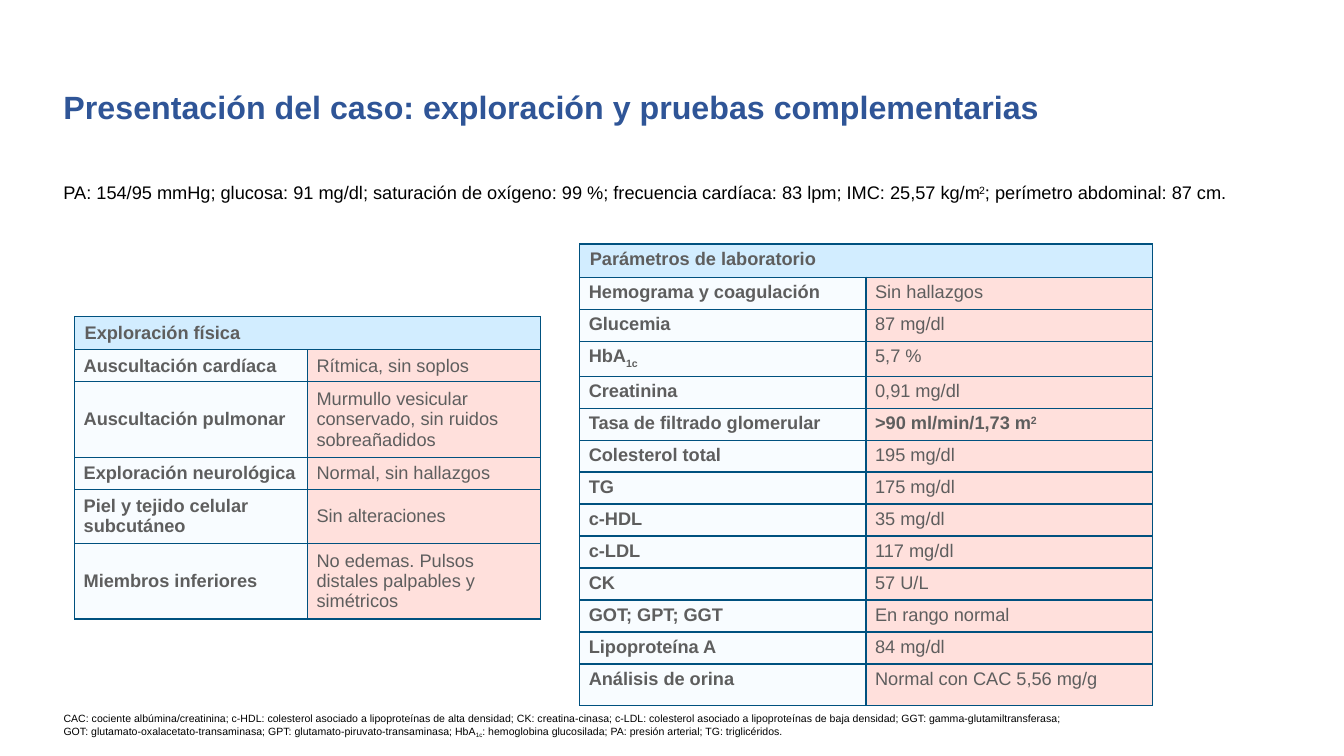
from lxml import etree
from pptx import Presentation
from pptx import util as u
from pptx.dml.color import RGBColor
from pptx.enum import text
from pptx.oxml import ns

PX = 9144  # EMU per px, 100 px to the inch
FONT = "Arial"
COLORS = {
    "title": "2F5597",
    "body": "000000",
    "cell": "5E5E5E",
    "header": "D2EDFF",
    "label": "F8FCFF",
    "value": "FFE0DC",
    "border": "00517F",
}
SUB, SUPER = -25, 30

VITALS = (
    "PA: 154/95 mmHg; glucosa: 91 mg/dl; saturación de oxígeno: 99 %; "
    "frecuencia cardíaca: 83 lpm; IMC: 25,57 kg/m",
    ("2", SUPER),
    "; perímetro abdominal: 87 cm.",
)
ABBREVIATIONS = (
    "CAC: cociente albúmina/creatinina; c-HDL: colesterol asociado a lipoproteínas de alta densidad; "
    "CK: creatina-cinasa; c-LDL: colesterol asociado a lipoproteínas de baja densidad; "
    "GGT: gamma-glutamiltransferasa; GOT: glutamato-oxalacetato-transaminasa; "
    "GPT: glutamato-piruvato-transaminasa; HbA",
    ("1c", SUB),
    ": hemoglobina glucosilada; PA: presión arterial; TG: triglicéridos.",
)
# Each row: label, value, height
EXAM_ROWS = [
    ("Auscultación cardíaca", "Rítmica, sin soplos", 31),
    ("Auscultación pulmonar", "Murmullo vesicular conservado, sin ruidos sobreañadidos", 75),
    ("Exploración neurológica", "Normal, sin hallazgos", 31),
    ("Piel y tejido celular subcutáneo", "Sin alteraciones", 53),
    ("Miembros inferiores", "No edemas. Pulsos distales palpables y simétricos", 75),
]
FILTRATION = (">90 ml/min/1,73 m", ("2", SUPER))
LAB_ROWS = [
    ("Hemograma y coagulación", "Sin hallazgos", 31),
    ("Glucemia", "87 mg/dl", 31),
    (("HbA", ("1c", SUB)), "5,7 %", 31),
    ("Creatinina", "0,91 mg/dl", 31),
    ("Tasa de filtrado glomerular", FILTRATION, 31),
    ("Colesterol total", "195 mg/dl", 31),
    ("TG", "175 mg/dl", 31),
    ("c-HDL", "35 mg/dl", 31),
    ("c-LDL", "117 mg/dl", 31),
    ("CK", "57 U/L", 31),
    ("GOT; GPT; GGT", "En rango normal", 31),
    ("Lipoproteína A", "84 mg/dl", 31),
    ("Análisis de orina", "Normal con CAC 5,56 mg/g", 41),
]


def px(length):
    return u.Emu(length * PX)


def write(para, content, size, color, bold=False):
    """Fill a paragraph from a string, or from strings and (text, baseline) pairs."""
    para.font.name = FONT
    para.font.size = u.Pt(size)
    para.font.bold = bold
    para.font.color.rgb = RGBColor.from_string(COLORS[color])
    for part in (content,) if isinstance(content, str) else content:
        words, baseline = (part, 0) if isinstance(part, str) else part
        span = para.add_run()
        span.text = words
        if baseline:
            span.font._element.set("baseline", str(baseline * 1000))


def add_text(page, area, content, size, color, anchor, bold=False):
    box = page.shapes.add_textbox(*map(px, area))
    frame = box.text_frame
    frame.word_wrap = True
    frame.vertical_anchor = anchor
    frame.margin_left = frame.margin_right = px(3)
    frame.margin_top = frame.margin_bottom = px(3)
    write(frame.paragraphs[0], content, size, color, bold)


def add_borders(cell):
    properties = cell._tc.get_or_add_tcPr()
    for side in ("a:lnL", "a:lnR", "a:lnT", "a:lnB"):
        line = etree.SubElement(properties, ns.qn(side), w=str(u.Pt(1)))
        fill = etree.SubElement(line, ns.qn("a:solidFill"))
        etree.SubElement(fill, ns.qn("a:srgbClr"), val=COLORS["border"])


def style_cell(cell, content, fill, anchor, bold, side_margin):
    cell.margin_left = cell.margin_right = px(side_margin)
    cell.margin_top = cell.margin_bottom = px(5)
    cell.vertical_anchor = anchor
    add_borders(cell)
    cell.fill.solid()
    cell.fill.fore_color.rgb = RGBColor.from_string(COLORS[fill])
    write(cell.text_frame.paragraphs[0], content, 13, "cell", bold)


def add_findings(page, left, top, width, heading, rows, anchor):
    """Two equal columns under a merged heading."""
    heights = [33] + [height for _, _, height in rows]
    area = (left, top, width, sum(heights))
    table = page.shapes.add_table(len(heights), 2, *map(px, area)).table
    table.first_row = table.horz_banding = False
    for column in table.columns:
        column.width = px(width // 2)
    for row, height in zip(table.rows, heights):
        row.height = px(height)

    # Heading
    table.cell(0, 0).merge(table.cell(0, 1))
    style_cell(table.cell(0, 0), heading, "header", anchor, True, 10)
    add_borders(table.cell(0, 1))

    # Labels and values
    for index, (label, value, _) in enumerate(rows, start=1):
        style_cell(table.cell(index, 0), label, "label", anchor, True, 9)
        style_cell(table.cell(index, 1), value, "value", anchor, value is FILTRATION, 9)


def build_case_slide(page):
    top, middle, bottom = text.MSO_ANCHOR.TOP, text.MSO_ANCHOR.MIDDLE, text.MSO_ANCHOR.BOTTOM
    # Title and vital signs
    add_text(page, (60, 84, 1003, 44),
             "Presentación del caso: exploración y pruebas complementarias",
             23, "title", middle, bold=True)
    add_text(page, (60, 177, 1273, 56), VITALS, 13, "body", top)
    # Tables
    add_findings(page, 74, 314, 462, "Exploración física", EXAM_ROWS, middle)
    add_findings(page, 575, 242, 568, "Parámetros de laboratorio", LAB_ROWS, top)
    # Abbreviations
    add_text(page, (60, 705, 998, 31), ABBREVIATIONS, 7.5, "body", bottom)


def main():
    deck = Presentation()
    deck.slide_width, deck.slide_height = u.Inches(13.33), u.Inches(7.5)
    build_case_slide(deck.slides.add_slide(deck.slide_layouts[6]))
    deck.save("out.pptx")


if __name__ == "__main__":
    main()
